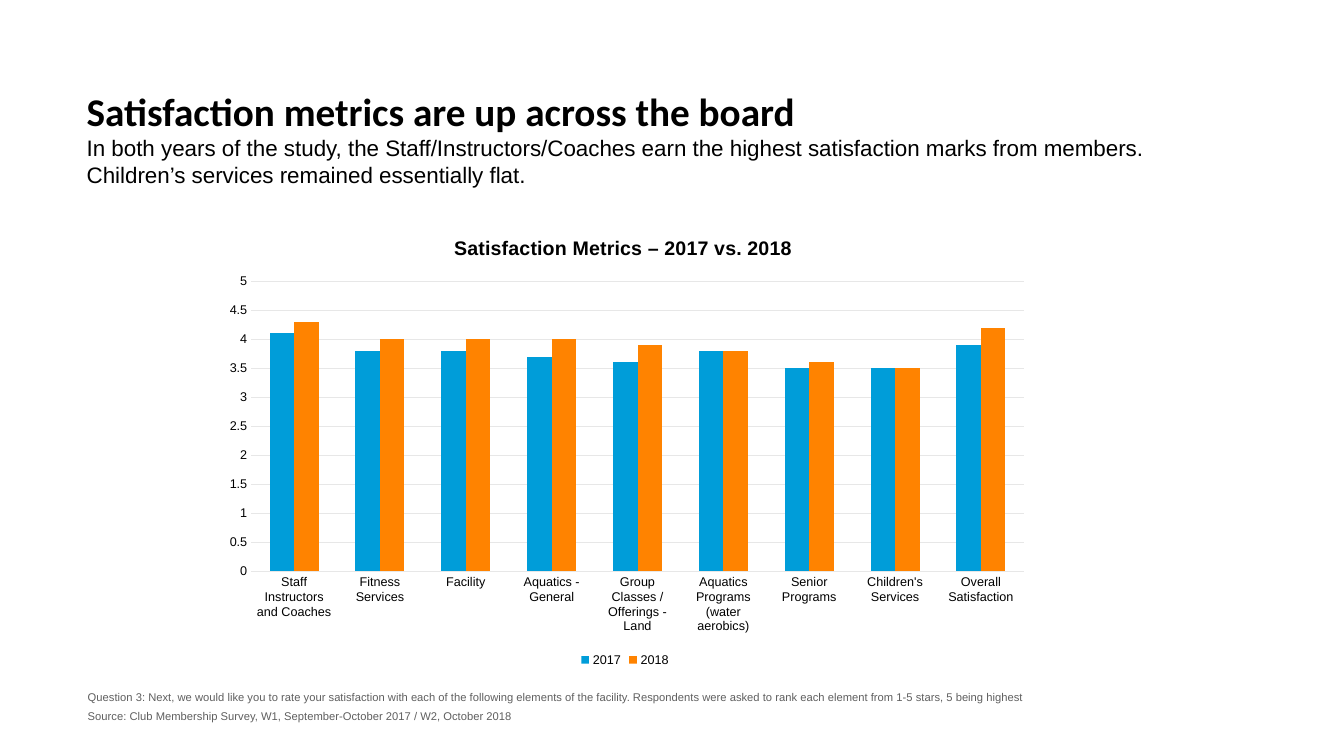
from pptx import Presentation
from pptx.chart.data import CategoryChartData
from pptx.dml.color import RGBColor
from pptx.enum.chart import XL_CHART_TYPE, XL_LEGEND_POSITION, XL_TICK_MARK
from pptx.enum.text import MSO_ANCHOR, PP_ALIGN
from pptx.oxml import parse_xml
from pptx.oxml.ns import nsdecls
from pptx.util import Inches, Pt

COLUMNS = XL_CHART_TYPE.COLUMN_CLUSTERED
LEGEND_BOTTOM = XL_LEGEND_POSITION.BOTTOM
NO_TICK = XL_TICK_MARK.NONE
TOP, BOTTOM = MSO_ANCHOR.TOP, MSO_ANCHOR.BOTTOM
LEFT = PP_ALIGN.LEFT

# Content
TITLE = "Satisfaction metrics are up across the board"
SUBTITLE = ("In both years of the study, the Staff/Instructors/Coaches earn the highest "
            "satisfaction marks from members. Children’s services remained essentially flat.")
CHART_TITLE = "Satisfaction Metrics – 2017 vs. 2018"
RATINGS = [
    ("Staff Instructors and Coaches", 4.1, 4.3),
    ("Fitness Services", 3.8, 4),
    ("Facility", 3.8, 4),
    ("Aquatics - General", 3.7, 4),
    ("Group Classes / Offerings - Land", 3.6, 3.9),
    ("Aquatics Programs (water aerobics)", 3.8, 3.8),
    ("Senior Programs", 3.5, 3.6),
    ("Children's Services", 3.5, 3.5),
    ("Overall Satisfaction", 3.9, 4.2),
]
YEARS = [("2017", "009DD9"), ("2018", "FF8300")]
FOOTNOTES = [
    "Question 3: Next, we would like you to rate your satisfaction with each of the following "
    "elements of the facility. Respondents were asked to rank each element from 1-5 stars, "
    "5 being highest",
    "Source: Club Membership Survey, W1, September-October 2017 / W2, October 2018",
]


def color(value):
    return RGBColor.from_string(value)


def style_font(font, size, value="000000", name="Arial", bold=False):
    font.size = Pt(size)
    font.name = name
    font.bold = bold
    font.color.rgb = color(value)


def fill_text(shape, lines, anchor, space_before=0, line_spacing=1.0, **font_style):
    frame = shape.text_frame
    frame.word_wrap = True
    frame.vertical_anchor = anchor
    frame.margin_left = frame.margin_right = frame.margin_top = frame.margin_bottom = 0
    frame.text = "\n".join(lines)
    for paragraph in frame.paragraphs:
        paragraph.alignment = LEFT
        paragraph.space_before = Pt(space_before)
        paragraph.line_spacing = line_spacing
        style_font(paragraph.runs[0].font, **font_style)


def set_layout(element, position, **fractions):
    """Place a chart part by fractions of the chart area."""
    for old_layout in element.findall("{*}layout"):
        element.remove(old_layout)
    target = '<c:layoutTarget val="inner"/>' if "w" in fractions else ""
    modes = '<c:xMode val="edge"/><c:yMode val="edge"/>'
    values = "".join(f'<c:{key} val="{value}"/>' for key, value in fractions.items())
    element.insert(position, parse_xml(
        f'<c:layout {nsdecls("c")}><c:manualLayout>{target}{modes}{values}'
        '</c:manualLayout></c:layout>'))


presentation = Presentation()
presentation.slide_width = Inches(13.33)
presentation.slide_height = Inches(7.5)
slide = presentation.slides.add_slide(presentation.slide_layouts[5])

# Title and subtitle
title = slide.shapes.title
title.left, title.top = Inches(0.86), Inches(0.83)
title.width, title.height = Inches(11.74), Inches(0.5)
fill_text(title, [TITLE], BOTTOM, line_spacing=0.8, size=28, name="Calibri", bold=True)
subtitle = slide.shapes.add_textbox(Inches(0.86), Inches(1.33), Inches(11.37), Inches(0.7))
fill_text(subtitle, [SUBTITLE], TOP, size=16)

# Chart
chart_data = CategoryChartData()
chart_data.categories = [row[0] for row in RATINGS]
for column, (year, _) in enumerate(YEARS, start=1):
    chart_data.add_series(year, [row[column] for row in RATINGS])
chart = slide.shapes.add_chart(COLUMNS, Inches(2.08), Inches(2.16), Inches(8.24), Inches(4.5),
                               chart_data).chart
style_font(chart.font, 10, "5F5F5F")

chart.has_title = True
chart.chart_title.text_frame.text = CHART_TITLE
style_font(chart.chart_title.text_frame.paragraphs[0].runs[0].font, 14, bold=True)
chart.chart_title.include_in_layout = False
chart_element = chart.element.chart
set_layout(chart_element.find("{*}title"), 1, x=0.29, y=0.03)
set_layout(chart_element.plotArea, 0, x=0.05, y=0.14, w=0.93, h=0.64)

chart.has_legend = True
chart.legend.position = LEGEND_BOTTOM
chart.legend.include_in_layout = False
style_font(chart.legend.font, 9)

plot = chart.plots[0]
plot.gap_width = 150
plot.overlap = 0
plot.vary_by_categories = False
for series, (_, series_color) in zip(plot.series, YEARS):
    series.format.fill.solid()
    series.format.fill.fore_color.rgb = color(series_color)

# Axes
for axis in (chart.category_axis, chart.value_axis):
    axis.major_tick_mark = axis.minor_tick_mark = NO_TICK
    axis.format.line.fill.background()
    style_font(axis.tick_labels.font, 9)
value_axis = chart.value_axis
value_axis.minimum_scale, value_axis.maximum_scale = 0, 5
value_axis.major_unit = 0.5
value_axis.has_major_gridlines = True
value_axis.major_gridlines.format.line.color.rgb = color("E7E7E7")
value_axis.major_gridlines.format.line.width = Pt(0.75)

# Footnotes
footnotes = slide.shapes.add_textbox(Inches(0.87), Inches(6.85), Inches(11.35), Inches(0.3))
fill_text(footnotes, FOOTNOTES, TOP, space_before=4, size=8, value="5F5F5F")

presentation.save("out.pptx")
